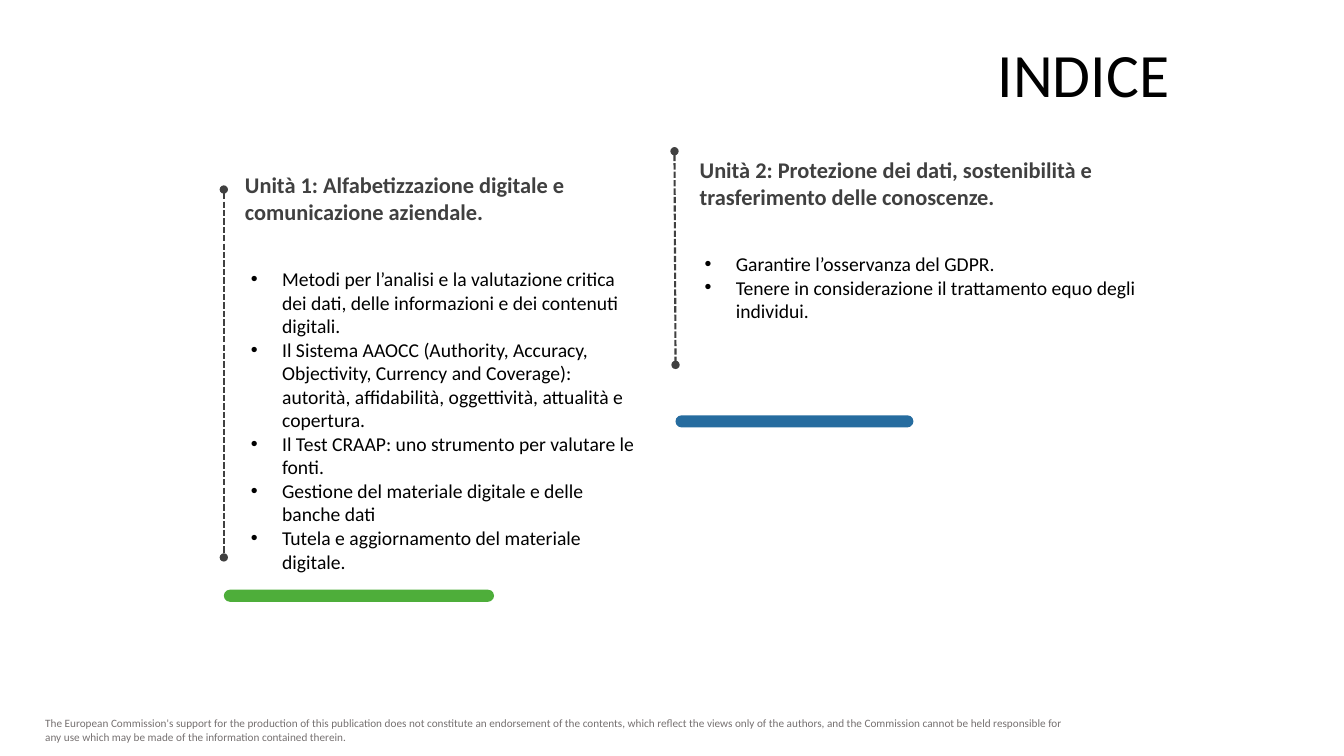
from lxml.etree import SubElement
from pptx import Presentation
from pptx.dml.color import RGBColor
from pptx.enum.dml import MSO_LINE
from pptx.enum.shapes import MSO_CONNECTOR, MSO_SHAPE
from pptx.enum.text import MSO_ANCHOR, PP_ALIGN
from pptx.oxml.ns import qn
from pptx.util import Inches, Pt


def color(value):
    return RGBColor.from_string(value)


class IndexPage:
    font_name = "Calibri"
    black, dark, gray = "000000", "404040", "767171"
    green, blue = "4EAE3A", "266C9F"

    def __init__(self, deck):
        self.page = deck.slides.add_slide(deck.slide_layouts[5])

    def format(self, para, size, tint, bold=False):
        for span in para.runs:
            span.font.name = self.font_name
            span.font.size = Pt(size)
            span.font.bold = bold
            span.font.color.rgb = color(tint)

    def title(self, text, left, top, width, height):
        box = self.page.shapes.title
        box.left, box.top = Inches(left), Inches(top)
        box.width, box.height = Inches(width), Inches(height)
        frame = box.text_frame
        frame.text = text
        frame.vertical_anchor = MSO_ANCHOR.MIDDLE
        para = frame.paragraphs[0]
        para.alignment = PP_ALIGN.RIGHT
        para.line_spacing = 0.9
        self.format(para, 44, self.black)

    def text(self, lines, left, top, width, height, size, tint,
             bold=False, bullets=False, inset=0.1):
        box = self.page.shapes.add_textbox(
            Inches(left), Inches(top), Inches(width), Inches(height))
        frame = box.text_frame
        frame.word_wrap = True
        frame.margin_left = frame.margin_right = Inches(inset)
        frame.text = "\n".join(lines)
        for para in frame.paragraphs:
            if bullets:
                self.bullet(para)
            self.format(para, size, tint, bold)

    def bullet(self, para):
        properties = para._p.get_or_add_pPr()
        indent = Inches(0.31)
        properties.set("marL", str(indent))
        properties.set("indent", str(-indent))
        SubElement(properties, qn("a:buFont"), typeface="Arial")
        SubElement(properties, qn("a:buChar"), char="•")

    def bar(self, left, top, width, tint):
        bar = self.page.shapes.add_shape(
            MSO_SHAPE.ROUNDED_RECTANGLE,
            Inches(left), Inches(top), Inches(width), Inches(0.12))
        bar.adjustments[0] = 0.5
        bar.shadow.inherit = False
        bar.fill.solid()
        bar.fill.fore_color.rgb = color(tint)
        bar.line.fill.background()

    def dotted_line(self, start, end):
        line = self.page.shapes.add_connector(
            MSO_CONNECTOR.STRAIGHT, *map(Inches, start + end))
        line.line.color.rgb = color(self.dark)
        line.line.width = Pt(1.5)
        line.line.dash_style = MSO_LINE.SQUARE_DOT
        outline = line.line._get_or_add_ln()
        for tip in ("a:headEnd", "a:tailEnd"):
            SubElement(outline, qn(tip), type="oval")
        SubElement(line._element.spPr, qn("a:effectLst"))

    def heading(self, text, left, top, width, height):
        self.text([text], left, top, width, height, 16, self.dark,
                  bold=True, inset=0.12)

    def topics(self, lines, left, top, width, height):
        self.text(lines, left, top, width, height, 14, self.black,
                  bullets=True)


def main():
    deck = Presentation()
    deck.slide_width, deck.slide_height = Inches(13.33), Inches(7.5)
    index = IndexPage(deck)

    # Disclaimer and title
    index.text(
        ["The European Commission's support for the production of this "
         "publication does not constitute an endorsement of the contents, "
         "which reflect the views only of the authors, and the Commission "
         "cannot be held responsible for any use which may be made of the "
         "information contained therein."],
        0.35, 7.06, 10.46, 0.37, 8, index.gray)
    index.title("INDICE", 3.09, 0.37, 8.61, 0.79)

    # Unit 1
    index.bar(2.22, 5.85, 2.68, index.green)
    index.topics(
        ["Metodi per l’analisi e la valutazione critica dei dati, delle "
         "informazioni e dei contenuti digitali.",
         "Il Sistema AAOCC (Authority, Accuracy, Objectivity, Currency and "
         "Coverage): autorità, affidabilità, oggettività, attualità e "
         "copertura.",
         "Il Test CRAAP: uno strumento per valutare le fonti.",
         "Gestione del materiale digitale e delle banche dati",
         "Tutela e aggiornamento del materiale digitale."],
        2.39, 2.6, 4.03, 3.16)
    index.heading(
        "Unità 1: Alfabetizzazione digitale e comunicazione aziendale.",
        2.31, 1.65, 4.58, 0.64)
    index.dotted_line((2.22, 1.88), (2.22, 5.53))

    # Unit 2
    index.bar(6.7, 4.12, 2.36, index.blue)
    index.topics(
        ["Garantire l’osservanza del GDPR.",
         "Tenere in considerazione il trattamento equo degli individui."],
        6.89, 2.45, 4.5, 1.04)
    index.heading(
        "Unità 2: Protezione dei dati, sostenibilità e trasferimento delle "
        "conoscenze.",
        6.82, 1.5, 4.37, 0.91)
    index.dotted_line((6.69, 1.5), (6.7, 3.62))

    deck.save("out.pptx")


if __name__ == "__main__":
    main()
